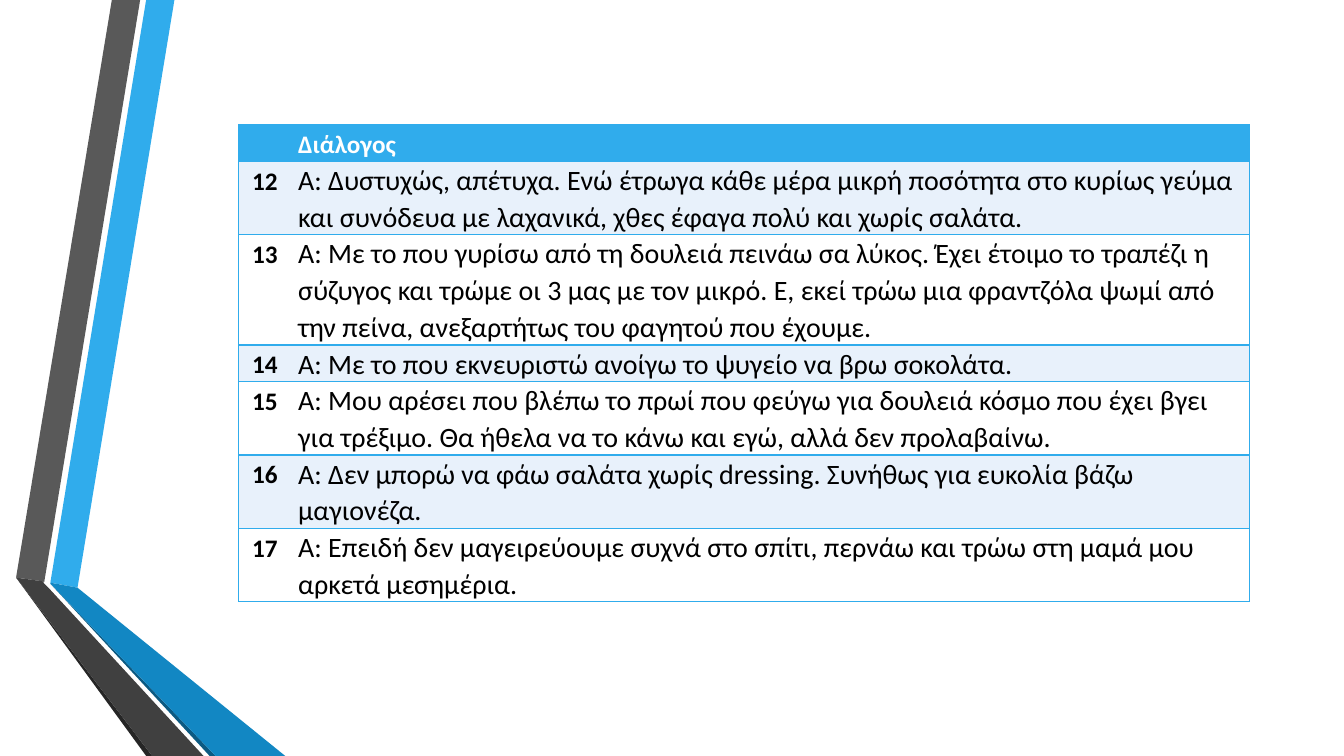
from lxml import etree
from pptx import Presentation
from pptx import util as u
from pptx.dml.color import RGBColor
from pptx.enum import text
from pptx.oxml import ns

Pt = u.Pt

# Content
HEAD = "Διάλογος"
ROWS = [  # number, speech, lines of text
    ("12", "Α: Δυστυχώς, απέτυχα. Ενώ έτρωγα κάθε μέρα μικρή ποσότητα στο κυρίως γεύμα "
           "και συνόδευα με λαχανικά, χθες έφαγα πολύ και χωρίς σαλάτα.", 2),
    ("13", "Α: Με το που γυρίσω από τη δουλειά πεινάω σα λύκος. Έχει έτοιμο το τραπέζι η "
           "σύζυγος και τρώμε οι 3 μας με τον μικρό. Ε, εκεί τρώω μια φραντζόλα ψωμί από "
           "την πείνα, ανεξαρτήτως του φαγητού που έχουμε.", 3),
    ("14", "Α: Με το που εκνευριστώ ανοίγω το ψυγείο να βρω σοκολάτα.", 1),
    ("15", "Α: Μου αρέσει που βλέπω το πρωί που φεύγω για δουλειά κόσμο που έχει βγει "
           "για τρέξιμο. Θα ήθελα να το κάνω και εγώ, αλλά δεν προλαβαίνω.", 2),
    ("16", "Α: Δεν μπορώ να φάω σαλάτα χωρίς dressing. Συνήθως για ευκολία βάζω "
           "μαγιονέζα.", 2),
    ("17", "Α: Επειδή δεν μαγειρεύουμε συχνά στο σπίτι, περνάω και τρώω στη μαμά μου "
           "αρκετά μεσημέρια.", 2),
]
BLUE, PALE, WHITE, BLACK = "30ACEC", "E8F1FB", "FFFFFF", "000000"
BANDS = [  # colour, corners in points
    (BLUE, [(36, 416.2), (55.4, 419.8), (124.6, 0), (104.4, 0)]),
    ("595959", [(100.1, 0), (79.9, 0), (11.5, 412.6), (31.7, 415.4)]),
    ("262626", [(11.5, 412.6), (104.4, 540), (108.7, 540)]),
    ("0C5A82", [(36, 416.9), (149.8, 540), (154.1, 540)]),
    ("1287C3", [(36, 416.9), (154.1, 540), (203.8, 540), (55.4, 419.8), (36, 416.2)]),
    ("404040", [(145.4, 540), (34.6, 419.8), (31, 416.2), (31.7, 415.4),
                (11.5, 412.6), (108.7, 540)]),
]
LEFT, TOP, COLS, LINE = 170.6, 89.3, (37.4, 684.7), 26.1
INSET = {"margin_left": Pt(5), "margin_right": Pt(5), "margin_top": 0, "margin_bottom": 0}
MARK = {"name": "Calibri", "size": Pt(18), "bold": True}
BODY = {"name": "Calibri", "size": Pt(20), "bold": False}


def put(obj, vals):
    for key, val in vals.items():
        setattr(obj, key, val)


def paint(fill, tone):
    fill.solid()
    fill.fore_color.rgb = RGBColor.from_string(tone)


def edge(cell, inner):
    """Rule every side of a cell except the inner one."""
    props = cell._tc.get_or_add_tcPr()
    for pos, side in enumerate("LRTB"):
        line = etree.Element(ns.qn("a:ln" + side), w=str(Pt(1)))
        if side == inner:
            etree.SubElement(line, ns.qn("a:noFill"))
        else:
            solid = etree.SubElement(line, ns.qn("a:solidFill"))
            etree.SubElement(solid, ns.qn("a:srgbClr"), val=BLUE)
        props.insert(pos, line)


def write(cell, words, font, tone, space, align):
    para = cell.text_frame.paragraphs[0]
    put(para, {"line_spacing": space, "alignment": align})
    if words:
        run = para.add_run()
        run.text = words
        put(run.font, font)
        run.font.color.rgb = RGBColor.from_string(tone)


deck = Presentation()
put(deck, {"slide_width": Pt(960), "slide_height": Pt(540)})
slide = deck.slides.add_slide(deck.slide_layouts[6])

# Folded bands on the left
for tone, dots in BANDS:
    dots = [(Pt(x), Pt(y)) for x, y in dots]
    pen = slide.shapes.build_freeform(*dots[0])
    pen.add_line_segments(dots[1:], close=True)
    band = pen.convert_to_shape()
    band.shadow.inherit = False
    paint(band.fill, tone)
    band.line.fill.background()

# Dialogue table
data = [("", HEAD, 1)] + ROWS
high = [LINE * lines for _, _, lines in data]
grid = slide.shapes.add_table(len(data), 2, Pt(LEFT), Pt(TOP),
                              Pt(sum(COLS)), Pt(sum(high))).table
put(grid, {"first_row": False, "horz_banding": False})
for col, wide in zip(grid.columns, COLS):
    col.width = Pt(wide)
for i, (num, words, _) in enumerate(data):
    grid.rows[i].height = Pt(high[i])
    back = BLUE if i == 0 else (PALE if i % 2 else WHITE)
    ink = BLACK if i else WHITE
    left, right = grid.cell(i, 0), grid.cell(i, 1)
    for cell, inner in ((left, "R"), (right, "L")):
        put(cell, INSET)
        paint(cell.fill, back)
        edge(cell, inner)
    write(left, num, MARK, ink, 1.15, text.PP_ALIGN.CENTER)
    write(right, words, BODY if i else MARK, ink, 1.07 if i else 1.15, text.PP_ALIGN.LEFT)

deck.save("out.pptx")
